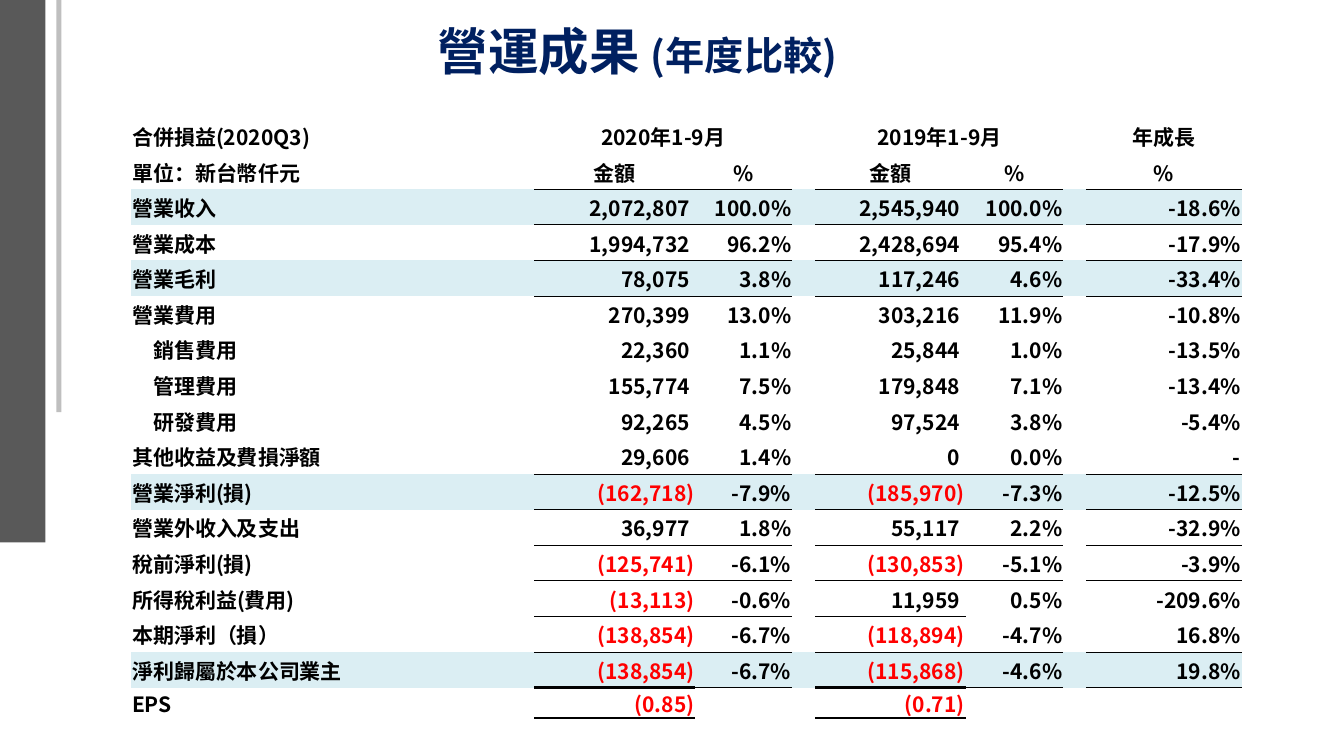
import pptx
import pptx.dml.color
import pptx.enum.shapes
import pptx.enum.text
import pptx.oxml
import pptx.oxml.ns
import pptx.util

Pt = pptx.util.Pt
RGBColor = pptx.dml.color.RGBColor
Align = pptx.enum.text.PP_ALIGN
Anchor = pptx.enum.text.MSO_ANCHOR

BLACK = RGBColor(0x00, 0x00, 0x00)
WHITE = RGBColor(0xFF, 0xFF, 0xFF)
RED = RGBColor(0xFF, 0x00, 0x00)
NAVY = RGBColor(0x00, 0x20, 0x60)
PALE_BLUE = RGBColor(0xDB, 0xEE, 0xF3)
DARK_GRAY = RGBColor(0x59, 0x59, 0x59)
LIGHT_GRAY = RGBColor(0xBF, 0xBF, 0xBF)

FONT = "Noto Sans CJK SC"
PLAIN_TABLE_STYLE = "{2D5ABB26-0587-4C30-8999-92F81FD0307C}"

COLUMN_WIDTHS = [271.44, 16.56, 115.2, 69.12, 16.56, 107.28, 69.84, 16.56, 110.88]
VALUE_COLUMNS = [2, 3, 5, 6, 8]
AMOUNT_COLUMNS = [2, 5]
ROW_HEIGHT = 25.45
LAST_ROW_HEIGHT = 21.6
HEADER_ROWS = 2
SHADED_ROWS = [2, 4, 10, 15]
INDENTED_ROWS = [6, 7, 8]

RULES = {
    1: (VALUE_COLUMNS, 0.5),
    3: (VALUE_COLUMNS, 0.5),
    9: (VALUE_COLUMNS, 0.5),
    11: (VALUE_COLUMNS, 0.5),
    13: ([2, 3, 5], 0.5),
    14: (VALUE_COLUMNS, 0.5),
    15: (AMOUNT_COLUMNS, 2),
    16: (AMOUNT_COLUMNS, 2),
}

ROWS = [
    ("合併損益(2020Q3)", "2020年1-9月", "", "2019年1-9月", "", "年成長"),
    ("單位：新台幣仟元", "金額", "%", "金額", "%", "%"),
    ("營業收入", "2,072,807", "100.0%", "2,545,940", "100.0%", "-18.6%"),
    ("營業成本", "1,994,732", "96.2%", "2,428,694", "95.4%", "-17.9%"),
    ("營業毛利", "78,075", "3.8%", "117,246", "4.6%", "-33.4%"),
    ("營業費用", "270,399", "13.0%", "303,216", "11.9%", "-10.8%"),
    ("銷售費用", "22,360", "1.1%", "25,844", "1.0%", "-13.5%"),
    ("管理費用", "155,774", "7.5%", "179,848", "7.1%", "-13.4%"),
    ("研發費用", "92,265", "4.5%", "97,524", "3.8%", "-5.4%"),
    ("其他收益及費損淨額", "29,606", "1.4%", "0", "0.0%", "-"),
    ("營業淨利(損)", "(162,718)", "-7.9%", "(185,970)", "-7.3%", "-12.5%"),
    ("營業外收入及支出", "36,977", "1.8%", "55,117", "2.2%", "-32.9%"),
    ("稅前淨利(損)", "(125,741)", "-6.1%", "(130,853)", "-5.1%", "-3.9%"),
    ("所得稅利益(費用)", "(13,113)", "-0.6%", "11,959", "0.5%", "-209.6%"),
    ("本期淨利（損）", "(138,854)", "-6.7%", "(118,894)", "-4.7%", "16.8%"),
    ("淨利歸屬於本公司業主", "(138,854)", "-6.7%", "(115,868)", "-4.6%", "19.8%"),
    ("EPS", "(0.85)", "", "(0.71)", "", ""),
]


def apply_format(target, values):
    for name, value in values.items():
        setattr(target, name, value)


def add_child(parent, tag, **attributes):
    child = pptx.oxml.parse_xml(f"<a:{tag} {pptx.oxml.ns.nsdecls('a')}/>")
    for name, value in attributes.items():
        child.set(name, str(value))
    parent.append(child)
    return child


def add_run(paragraph, text, size, color):
    run = paragraph.add_run()
    run.text = text
    apply_format(run.font, {"size": Pt(size), "bold": True, "name": FONT})
    run.font.color.rgb = color
    add_child(run.font._element, "ea", typeface=FONT)


def add_bar(slide, left, width, height, color):
    shape = slide.shapes.add_shape(
        pptx.enum.shapes.MSO_SHAPE.RECTANGLE, Pt(left), Pt(0), Pt(width), Pt(height))
    shape.shadow.inherit = False
    shape.fill.solid()
    shape.fill.fore_color.rgb = color
    shape.line.fill.background()


def add_title(slide):
    shape = slide.shapes.add_textbox(Pt(256.32), Pt(11.52), Pt(398.16), Pt(54.72))
    apply_format(shape.text_frame, {"word_wrap": True, "vertical_anchor": Anchor.MIDDLE})
    paragraph = shape.text_frame.paragraphs[0]
    apply_format(paragraph, {"alignment": Align.CENTER, "line_spacing": 0.9})
    add_run(paragraph, "營運成果 ", 36, NAVY)
    add_run(paragraph, "(年度比較)", 28, NAVY)


def add_border(cell, tag, width):
    line = add_child(cell._tc.get_or_add_tcPr(), tag, w=Pt(width))
    add_child(add_child(line, "solidFill"), "srgbClr", val=BLACK)


def add_rules(table):
    for row, (columns, width) in RULES.items():
        for column in columns:
            add_border(table.cell(row, column), "lnB", width)
            if row + 1 < len(ROWS):
                add_border(table.cell(row + 1, column), "lnT", width)


def fill_cell(cell, row, column, text):
    negative = text.startswith("(")
    is_label = column == 0
    is_header = row < HEADER_ROWS
    is_positive_amount = column in AMOUNT_COLUMNS and not is_header and not negative
    apply_format(cell, {
        "vertical_anchor": Anchor.MIDDLE,
        "margin_left": Pt(15.72 if is_label and row in INDENTED_ROWS else 0.72),
        "margin_right": Pt(4.1 if is_positive_amount else 0.72),
        "margin_top": Pt(0.72),
        "margin_bottom": Pt(0),
    })
    cell.fill.solid()
    cell.fill.fore_color.rgb = PALE_BLUE if row in SHADED_ROWS else WHITE
    paragraph = cell.text_frame.paragraphs[0]
    value_alignment = Align.CENTER if is_header else Align.RIGHT
    apply_format(paragraph, {"alignment": Align.LEFT if is_label else value_alignment})
    if text:
        add_run(paragraph, text, 15, RED if negative else BLACK)
    else:
        add_child(paragraph._p, "endParaRPr", sz=1000)


def add_income_table(slide):
    frame = slide.shapes.add_table(
        len(ROWS), len(COLUMN_WIDTHS), Pt(93.6), Pt(84.24),
        Pt(sum(COLUMN_WIDTHS)), Pt(ROW_HEIGHT * (len(ROWS) - 1) + LAST_ROW_HEIGHT))
    table = frame.table
    apply_format(table, {"first_row": False, "horz_banding": False})
    table._tbl.tblPr.find(pptx.oxml.ns.qn("a:tableStyleId")).text = PLAIN_TABLE_STYLE
    for column, width in zip(table.columns, COLUMN_WIDTHS):
        column.width = Pt(width)
    for row in table.rows:
        row.height = Pt(ROW_HEIGHT)
    table.rows[len(ROWS) - 1].height = Pt(LAST_ROW_HEIGHT)
    add_rules(table)
    for row, texts in enumerate(ROWS):
        text_by_column = dict(zip([0] + VALUE_COLUMNS, texts))
        for column in range(len(COLUMN_WIDTHS)):
            fill_cell(table.cell(row, column), row, column, text_by_column.get(column, ""))
    for column in AMOUNT_COLUMNS:
        table.cell(0, column).merge(table.cell(0, column + 1))


def main():
    presentation = pptx.Presentation()
    apply_format(presentation, {"slide_width": Pt(960), "slide_height": Pt(540)})
    slide = presentation.slides.add_slide(presentation.slide_layouts[6])
    add_bar(slide, 0, 32.4, 387.36, DARK_GRAY)
    add_bar(slide, 40.32, 3.6, 294.48, LIGHT_GRAY)
    add_title(slide)
    add_income_table(slide)
    presentation.save("out.pptx")


if __name__ == "__main__":
    main()
